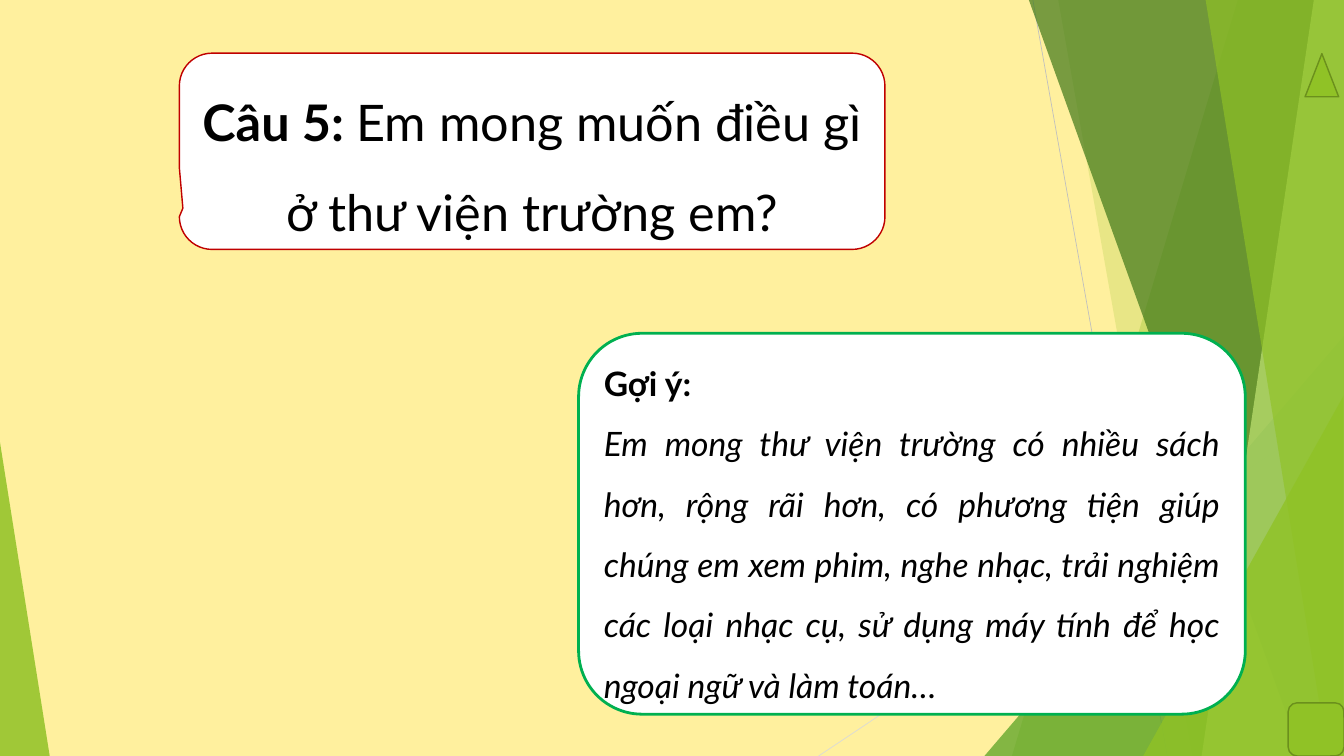
import pptx
import pptx.dml.color
import pptx.enum.shapes
import pptx.enum.text
import pptx.oxml.ns
import pptx.util
import lxml.etree

Cm = pptx.util.Cm
Pt = pptx.util.Pt
Shape = pptx.enum.shapes.MSO_SHAPE
Align = pptx.enum.text.PP_ALIGN
qn = pptx.oxml.ns.qn

WIDTH, HEIGHT = 50.8, 28.58
COLORS = {
    "cream": "FFF09E", "white": "FFFFFF", "black": "000000",
    "grey": "BFBFBF", "pale grey": "D9D9D9",
    "lime": "90C226", "green": "54A021", "forest": "3F7819",
    "light lime": "C0E474", "olive": "6B901C",
    "red": "C00000", "emerald": "00B050",
}


def rgb(name):
    return pptx.dml.color.RGBColor.from_string(COLORS[name])


class SlideBuilder:
    def __init__(self, slide, font="Lato", line_spacing=1.5):
        self.slide = slide
        self.shapes = slide.shapes
        self.font = font
        self.line_spacing = line_spacing

    def background(self, color):
        fill = self.slide.background.fill
        fill.solid()
        fill.fore_color.rgb = rgb(color)

    def paint(self, shape, color, opacity=100, outline=None, weight=1.5):
        shape.shadow.inherit = False
        shape.fill.solid()
        shape.fill.fore_color.rgb = rgb(color)
        if opacity < 100:
            tint = shape._element.spPr.find(qn("a:solidFill")).find(qn("a:srgbClr"))
            lxml.etree.SubElement(tint, qn("a:alpha"), val=str(opacity * 1000))
        if outline:
            shape.line.color.rgb = rgb(outline)
            shape.line.width = Pt(weight)
        else:
            shape.line.fill.background()
        return shape

    def line(self, start, end, color):
        line = self.shapes.add_connector(
            pptx.enum.shapes.MSO_CONNECTOR.STRAIGHT,
            *(Cm(v) for v in (*start, *end)))
        line.line.color.rgb = rgb(color)
        line.line.width = Pt(0.75)
        lxml.etree.SubElement(line._element.spPr, qn("a:effectLst"))

    def band(self, top_x, bottom_x, color, opacity):
        """Full-height facet from a slanted left edge to the slide's right edge."""
        outline = self.shapes.build_freeform(Cm(top_x), 0)
        outline.add_line_segments([
            (Cm(WIDTH), 0), (Cm(WIDTH), Cm(HEIGHT)), (Cm(bottom_x), Cm(HEIGHT))])
        self.paint(outline.convert_to_shape(), color, opacity)

    def shape(self, kind, box, color, adjust=(), **style):
        shape = self.shapes.add_shape(kind, *(Cm(v) for v in box))
        for i, value in enumerate(adjust):
            shape.adjustments[i] = value
        return self.paint(shape, color, **style)

    def text(self, shape, paragraphs, size, align):
        frame = shape.text_frame
        frame.word_wrap = True
        frame.vertical_anchor = pptx.enum.text.MSO_ANCHOR.MIDDLE
        for i, runs in enumerate(paragraphs):
            paragraph = frame.paragraphs[0] if i == 0 else frame.add_paragraph()
            paragraph.alignment = align
            paragraph.line_spacing = self.line_spacing
            for words, emphasis in runs:
                run = paragraph.add_run()
                run.text = words
                run.font.color.rgb = rgb("black")
                formats = {"name": self.font, "size": Pt(size), **emphasis}
                for attribute, value in formats.items():
                    setattr(run.font, attribute, value)


def main():
    deck = pptx.Presentation()
    deck.slide_width, deck.slide_height = Cm(WIDTH), Cm(HEIGHT)
    page = SlideBuilder(deck.slides.add_slide(deck.slide_layouts[6]))
    page.background("cream")

    # Faceted backdrop, back to front
    page.line((39.04, 0), (44.12, HEIGHT), "grey")
    page.line((50.77, 15.34), (30.94, HEIGHT), "pale grey")
    page.band(46.79, 38.25, "lime", 30)
    page.band(40, 45.06, "lime", 20)
    page.shape(Shape.ISOSCELES_TRIANGLE, (37.21, 12.7, 13.59, 15.88),
               "green", [1], opacity=72)
    page.band(38.89, 49.2, "forest", 70)
    page.band(49.66, 45.42, "light lime", 70)
    page.band(45.57, 50.19, "lime", 65)
    page.shape(Shape.ISOSCELES_TRIANGLE, (43.21, 14.97, 7.57, 13.61),
               "lime", [1], opacity=80)
    page.shape(Shape.ISOSCELES_TRIANGLE, (0, 16.72, 1.88, 11.86),
               "lime", [0], opacity=85)

    # Question
    question = page.shape(Shape.ROUNDED_RECTANGULAR_CALLOUT,
                          (6.78, 2.01, 26.67, 7.42), "white",
                          [-0.495, 0.29, 0.167], outline="red")
    page.text(question, [[
        ("Câu 5: ", {"bold": True}),
        ("Em mong muốn điều gì ở thư viện trường em?", {"bold": False}),
    ]], 54, Align.CENTER)

    # Suggested answer
    hint = page.shape(Shape.ROUNDED_RECTANGLE, (21.87, 12.6, 25.2, 14.4),
                      "white", outline="emerald", weight=3)
    page.text(hint, [
        [("Gợi ý:", {"bold": True})],
        [("Em mong thư viện trường có nhiều sách hơn, rộng rãi hơn, "
          "có phương tiện giúp chúng em xem phim, nghe nhạc, trải nghiệm "
          "các loại nhạc cụ, sử dụng máy tính để học ngoại ngữ và làm toán…",
          {"italic": True})],
    ], 36, Align.JUSTIFY)

    # Corner buttons
    page.shape(Shape.ROUNDED_RECTANGLE, (48.69, 26.57, 2.11, 2.01),
               "lime", outline="olive")
    page.shape(Shape.ISOSCELES_TRIANGLE, (49.33, 2.03, 1.27, 1.63),
               "lime", outline="olive")

    deck.save("out.pptx")


if __name__ == "__main__":
    main()
